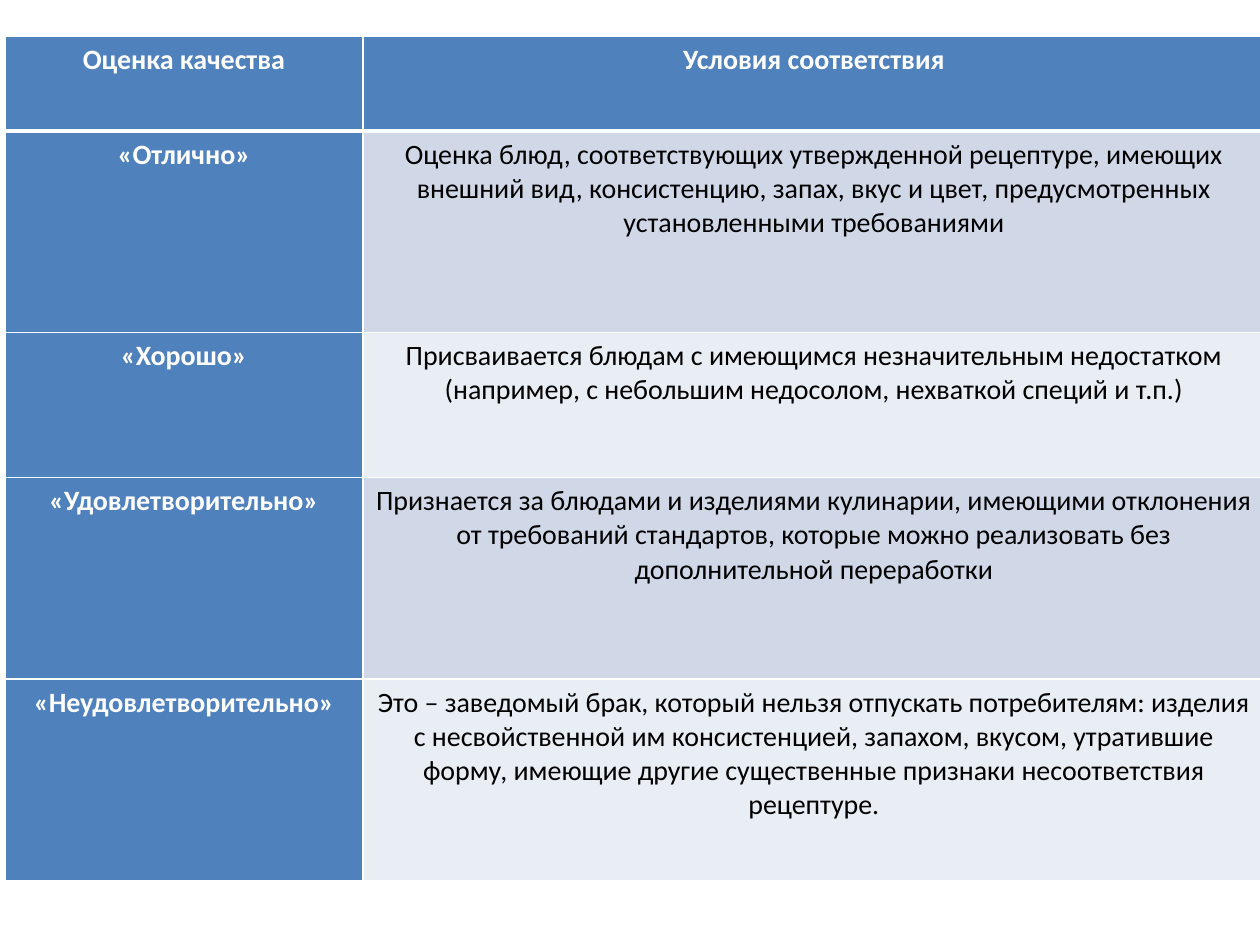
import pptx
import pptx.dml.color
import pptx.enum.text
import pptx.oxml
import pptx.oxml.ns
import pptx.util
from pptx.util import Inches, Pt

HEADER = ("Оценка качества", "Условия соответствия")
GRADES = [
    ("«Отлично»",
     "Оценка блюд, соответствующих утвержденной рецептуре, имеющих внешний вид, "
     "консистенцию, запах, вкус и цвет, предусмотренных установленными требованиями"),
    ("«Хорошо»",
     "Присваивается блюдам с имеющимся незначительным недостатком "
     "(например, с небольшим недосолом, нехваткой специй и т.п.)"),
    ("«Удовлетворительно»",
     "Признается за блюдами и изделиями кулинарии, имеющими отклонения от требований "
     "стандартов, которые можно реализовать без дополнительной переработки"),
    ("«Неудовлетворительно»",
     "Это – заведомый брак, который нельзя отпускать потребителям: изделия с "
     "несвойственной им консистенцией, запахом, вкусом, утратившие форму, имеющие "
     "другие существенные признаки несоответствия рецептуре."),
]
COLUMN_WIDTHS = (2.84, 7.16)
ROW_HEIGHTS = (0.75, 1.6, 1.15, 1.6, 1.6)
COLORS = {"accent": "4F81BD", "odd": "D0D8E8", "even": "E9EDF4",
          "white": "FFFFFF", "black": "000000"}


def color(name):
    return pptx.dml.color.RGBColor.from_string(COLORS[name])


def set_borders(cell, top, bottom):
    """Draw white borders; must run before the fill, which follows them in the XML."""
    properties = cell._tc.get_or_add_tcPr()
    for side, width in (("L", 1), ("R", 1), ("T", top), ("B", bottom)):
        properties.append(pptx.oxml.parse_xml(
            f'<a:ln{side} {pptx.oxml.ns.nsdecls("a")} w="{Pt(width)}"><a:solidFill>'
            f'<a:srgbClr val="{COLORS["white"]}"/></a:solidFill></a:ln{side}>'))


def format_cell(cell, text, row, column):
    emphasized = row == 0 or column == 0
    set_borders(cell, top=3 if row == 1 else 1, bottom=3 if row == 0 else 1)
    cell.fill.solid()
    cell.fill.fore_color.rgb = color("accent" if emphasized else "odd" if row % 2 else "even")
    cell.margin_left = cell.margin_right = Inches(0.05)
    cell.margin_top = cell.margin_bottom = Inches(0.05)
    cell.text_frame.text = text
    paragraph = cell.text_frame.paragraphs[0]
    paragraph.alignment = pptx.enum.text.PP_ALIGN.CENTER
    font = paragraph.runs[0].font
    font.name = "Calibri"
    font.size = Pt(16)
    font.bold = emphasized
    font.color.rgb = color("white" if emphasized else "black")


def main():
    presentation = pptx.Presentation()
    presentation.slide_width, presentation.slide_height = Inches(10), Inches(7.5)
    slide = presentation.slides.add_slide(presentation.slide_layouts[6])
    table = slide.shapes.add_table(
        len(ROW_HEIGHTS), len(COLUMN_WIDTHS), Inches(0.04), Inches(0.29),
        Inches(sum(COLUMN_WIDTHS)), Inches(sum(ROW_HEIGHTS))).table
    table.first_col = True
    for column, width in zip(table.columns, COLUMN_WIDTHS):
        column.width = Inches(width)
    for row, height in zip(table.rows, ROW_HEIGHTS):
        row.height = Inches(height)
    for row, texts in enumerate([HEADER, *GRADES]):
        for column, text in enumerate(texts):
            format_cell(table.cell(row, column), text, row, column)
    presentation.save("out.pptx")


if __name__ == "__main__":
    main()
